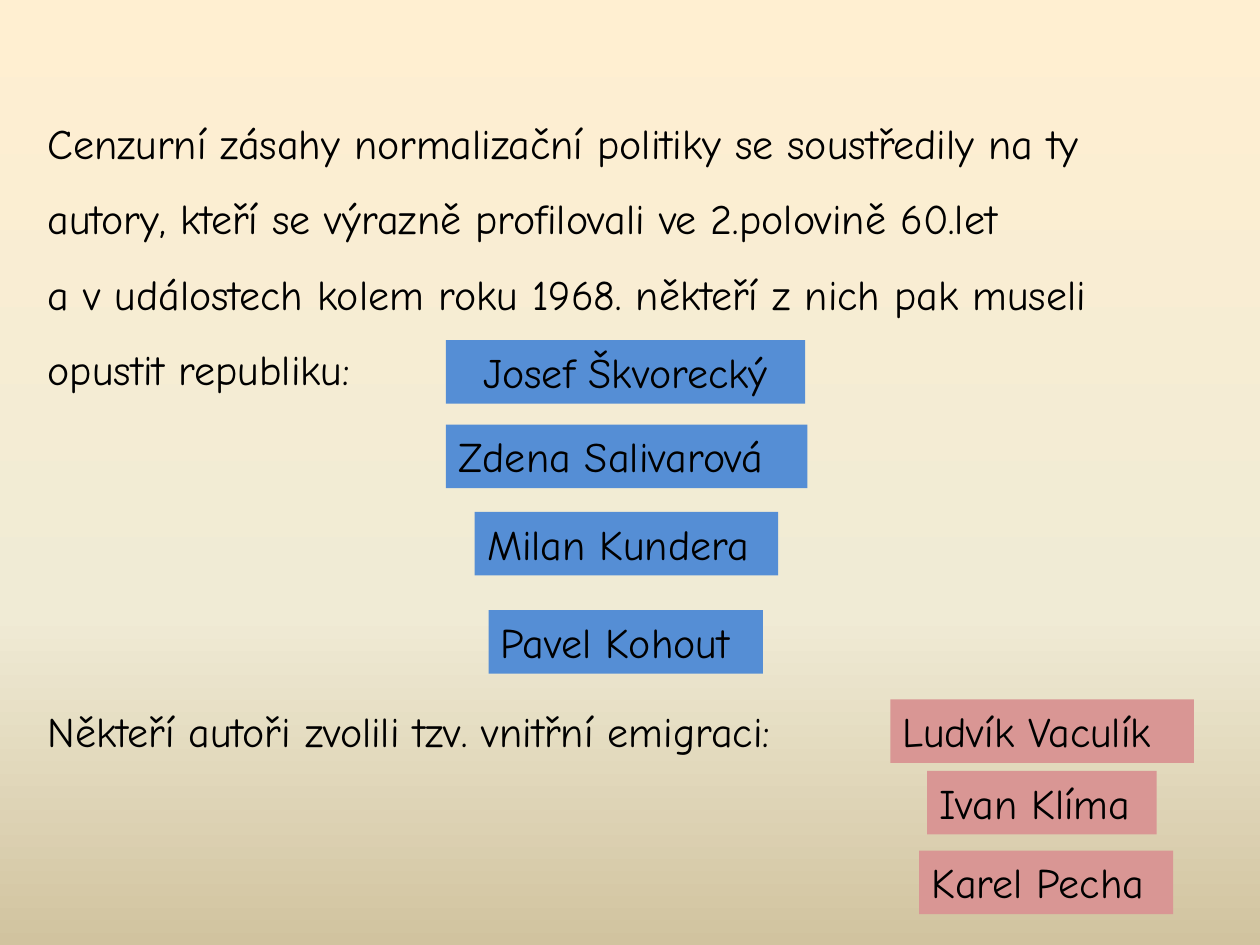
import copy

import pptx
import pptx.dml.color
import pptx.enum.shapes
import pptx.enum.text
import pptx.util

Cm = pptx.util.Cm
ALIGN = pptx.enum.text.PP_ALIGN


def colour(hex_value):
    return pptx.dml.color.RGBColor.from_string(hex_value)


class AuthorsSlide:
    """Holds the text style and the slide being built."""

    font_format = {"name": "Comic Neue", "size": pptx.util.Pt(24)}
    frame_format = {
        "word_wrap": True,
        "auto_size": pptx.enum.text.MSO_AUTO_SIZE.NONE,
        "vertical_anchor": pptx.enum.text.MSO_ANCHOR.TOP,
    }
    text_colour = "000000"
    line_height = 1.28

    def __init__(self, slide):
        self.slide = slide

    def background(self, stops):
        fill = self.slide.background.fill
        fill.gradient()
        fill.gradient_angle = 270
        stop_list = self.slide._element.xpath(".//a:gsLst")[0]
        while len(stop_list) < len(stops):
            stop_list.append(copy.deepcopy(stop_list[-1]))
        for stop, (position, hex_value) in zip(fill.gradient_stops, stops):
            stop.position = position
            stop.color.rgb = colour(hex_value)

    def set_text(self, shape, lines, align=ALIGN.LEFT, spacing=1.0):
        frame = shape.text_frame
        for key, value in self.frame_format.items():
            setattr(frame, key, value)
        frame.text = "\n".join(lines)
        for paragraph in frame.paragraphs:
            paragraph.alignment = align
            paragraph.line_spacing = spacing
            font = paragraph.runs[0].font
            for key, value in self.font_format.items():
                setattr(font, key, value)
            font.color.rgb = colour(self.text_colour)

    def statement(self, lines, left, top, width, height, spacing=1.0):
        box = self.slide.shapes.add_textbox(Cm(left), Cm(top), Cm(width), Cm(height))
        self.set_text(box, lines, spacing=spacing)

    def name_tag(self, name, left, top, width, fill, align=ALIGN.LEFT):
        tag = self.slide.shapes.add_shape(
            pptx.enum.shapes.MSO_SHAPE.RECTANGLE,
            Cm(left), Cm(top), Cm(width), Cm(self.line_height))
        tag.shadow.inherit = False
        tag.fill.solid()
        tag.fill.fore_color.rgb = colour(fill)
        tag.line.fill.background()
        self.set_text(tag, [name], align)


def main():
    deck = pptx.Presentation()
    deck.slide_width, deck.slide_height = Cm(25.4), Cm(19.05)
    page = AuthorsSlide(deck.slides.add_slide(deck.slide_layouts[6]))
    page.background([(0, "FFEFD1"), (0.65, "F0EBD5"), (1, "D1C39F")])

    # Authors forced to leave the country
    page.statement(
        ["Cenzurní zásahy normalizační politiky se soustředily na ty",
         "autory, kteří se výrazně profilovali ve 2.polovině 60.let",
         "a v událostech kolem roku 1968. někteří z nich pak museli",
         "opustit republiku:"],
        0.71, 1.73, 23.62, 6.4, spacing=1.5)
    exiles = [
        ("Josef Škvorecký", 8.99, 6.86, 7.24, ALIGN.CENTER),
        ("Zdena Salivarová", 8.99, 8.56, 7.29, ALIGN.LEFT),
        ("Milan Kundera", 9.57, 10.32, 6.12, ALIGN.LEFT),
        ("Pavel Kohout", 9.85, 12.3, 5.53, ALIGN.LEFT),
    ]
    for name, left, top, width, align in exiles:
        page.name_tag(name, left, top, width, "558ED5", align)

    # Authors in inner emigration
    page.statement(["Někteří autoři zvolili tzv. vnitřní emigraci:"],
                   0.71, 14.1, 17.27, page.line_height)
    inner_emigrants = [
        ("Ludvík Vaculík", 17.95, 14.1, 6.12),
        ("Ivan Klíma", 18.69, 15.54, 4.63),
        ("Karel Pecha", 18.53, 17.15, 5.12),
    ]
    for name, left, top, width in inner_emigrants:
        page.name_tag(name, left, top, width, "D99694")

    deck.save("out.pptx")


if __name__ == "__main__":
    main()
